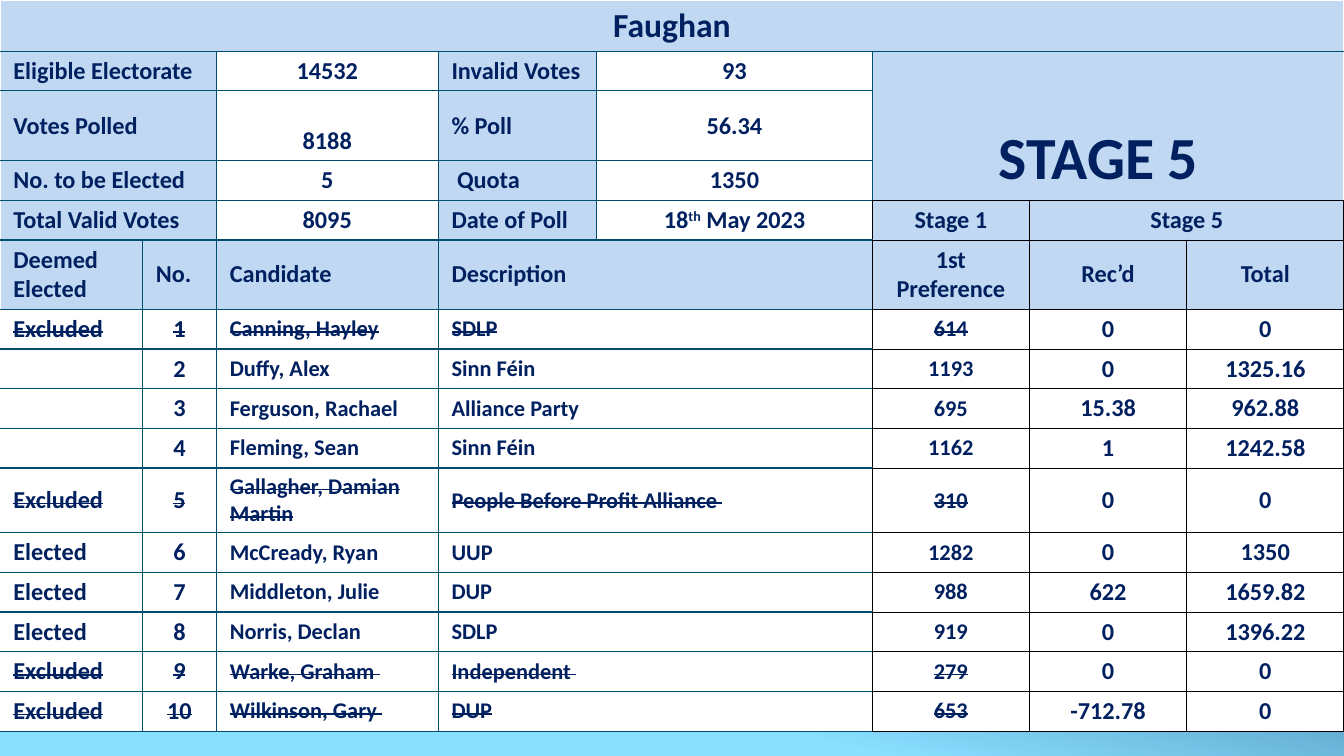
from dataclasses import dataclass
from lxml import etree
from pptx import Presentation
from pptx import util as u
from pptx.dml import color as col
from pptx.enum import text as tx
from pptx.oxml import ns


@dataclass
class Theme:
    font: str = "Calibri"
    ink: str = "002060"
    head: str = "C1D8F2"
    white: str = "FFFFFF"
    deep: str = "0D3868"
    sky: str = "8ADFFF"
    title: int = 18
    stage: int = 32
    body: int = 13
    small: int = 12
    pale: tuple = ("FFFFFF", 1)
    teal: tuple = ("004E6C", 0.75)
    black: tuple = ("000000", 0.5)


T = Theme()
MID = tx.MSO_ANCHOR.MIDDLE
LOW = tx.MSO_ANCHOR.BOTTOM
COLS = [1.06, 0.55, 1.65, 1.18, 2.05, 1.17, 1.17, 1.17]
TOP = [0.37, 0.29, 0.52, 0.29, 0.29, 0.51]

FACTS = [
    ("Eligible Electorate", "14532", "Invalid Votes", "93"),
    ("Votes Polled", "8188", "% Poll", "56.34"),
    ("No. to be Elected", "5", "\u00a0Quota", "1350"),
    ("Total Valid Votes", "8095", "Date of Poll",
     [("18", {}), ("th", {"baseline": "30000"}), (" May 2023", {})]),
]
HEADS = ["Deemed Elected", "No.", "Candidate", "Description",
         "1st Preference", "Rec’d", "Total"]
VOTES = [
    ("Excluded", "Canning, Hayley", "SDLP", "614", "0", "0"),
    ("", "Duffy, Alex", "Sinn Féin", "1193", "0", "1325.16"),
    ("", "Ferguson, Rachael", "Alliance Party", "695", "15.38", "962.88"),
    ("", "Fleming, Sean", "Sinn Féin", "1162", "1", "1242.58"),
    ("Excluded", "Gallagher, Damian Martin", "People Before Profit Alliance ",
     "310", "0", "0"),
    ("Elected", "McCready, Ryan", "UUP", "1282", "0", "1350"),
    ("Elected", "Middleton, Julie", "DUP", "988", "622", "1659.82"),
    ("Elected", "Norris, Declan", "SDLP", "919", "0", "1396.22"),
    ("Excluded", "Warke, Graham ", "Independent ", "279", "0", "0"),
    ("Excluded", "Wilkinson, Gary ", "DUP", "653", "-712.78", "0"),
]
SPOTS = [(0, 1), (1, 1), (2, 1), (3, 2), (5, 1), (6, 1), (7, 1)]


def rgb(code):
    return col.RGBColor.from_string(code)


def edge(cell, side, line):
    code, width = line
    ln = etree.SubElement(cell._tc.get_or_add_tcPr(), ns.qn("a:ln" + side),
                          w=str(u.Pt(width)))
    fill = etree.SubElement(ln, ns.qn("a:solidFill"))
    etree.SubElement(fill, ns.qn("a:srgbClr"), val=code)


def sides(row, left, wide):
    if left >= 5:
        return dict.fromkeys("LRTB", T.black)
    lines = dict.fromkeys("LRTB", T.teal)
    if left == 0:
        lines["L"] = T.pale
    if row >= 4 and left + wide == 5:
        lines["R"] = T.black
    return lines


def put(grid, row, left, words, wide=1, tall=1, fill=T.white, size=T.body,
        mid=False, anchor=MID, strike=False, lines=None):
    lines = lines or sides(row, left, wide)
    end, last = left + wide - 1, row + tall - 1
    for r in range(row, last + 1):
        for c in range(left, end + 1):
            first = (r, c) == (row, left)
            outer = {"L": c == left, "R": c == end,
                     "T": r == row, "B": r == last}
            for side in "LRTB":
                if first or outer[side]:
                    edge(grid.cell(r, c), side, lines[side])
    cell = grid.cell(row, left)
    if wide * tall > 1:
        cell.merge(grid.cell(last, end))
    cell.fill.solid()
    cell.fill.fore_color.rgb = rgb(fill)
    cell.vertical_anchor = anchor
    cell.margin_left = cell.margin_right = u.Inches(0.1)
    cell.margin_top = cell.margin_bottom = u.Pt(2.7)
    para = cell.text_frame.paragraphs[0]
    para.alignment = tx.PP_ALIGN.CENTER if mid else tx.PP_ALIGN.LEFT
    font = para.font
    font.name, font.size, font.bold = T.font, u.Pt(size), True
    font.color.rgb = rgb(T.ink)
    for part, marks in [(words, {})] if isinstance(words, str) else words:
        if part:
            run = para.add_run()
            run.text = part
            look = run._r.get_or_add_rPr()
            for key, val in marks.items():
                look.set(key, val)
            if strike:
                look.set("strike", "sngStrike")


def summary(grid, row):
    put(grid, row, 0, "Faughan", 8, fill=T.head, size=T.title, mid=True,
        lines={**dict.fromkeys("LRT", T.pale), "B": T.teal})
    for r, (name, count, label, value) in enumerate(FACTS, row + 1):
        put(grid, r, 0, name, 2, fill=T.head)
        put(grid, r, 2, count, mid=True,
            anchor=LOW if name == "Votes Polled" else MID)
        put(grid, r, 3, label, fill=T.head)
        put(grid, r, 4, value, mid=True)
    gap = ("\u00a0", {"sz": str(T.body * 100)})
    put(grid, row + 1, 5, [("STAGE 5\u00a0", {}), gap], 3, 3, T.head,
        T.stage, True, LOW,
        lines={"L": T.teal, "T": T.teal, "R": T.pale, "B": T.black})
    put(grid, row + 4, 5, "Stage 1", fill=T.head, mid=True)
    put(grid, row + 4, 6, "Stage 5", 2, fill=T.head, mid=True)


def results(grid, row):
    for (left, wide), name in zip(SPOTS, HEADS):
        put(grid, row, left, name, wide, fill=T.head, mid=left >= 5)
    for num, (state, *rest) in enumerate(VOTES, 1):
        for (left, wide), words in zip(SPOTS, (state, str(num), *rest)):
            put(grid, row + num, left, words, wide,
                size=T.small if left in (2, 3, 5) else T.body,
                mid=left == 1 or left >= 5,
                strike=state == "Excluded" and left <= 5)


def board(slide, left, top, width):
    rows = TOP + [0.48 if len(vote[1]) > 20 else 0.29 for vote in VOTES]
    box = [u.Inches(n) for n in (left, top, width, sum(rows))]
    grid = slide.shapes.add_table(len(rows), len(COLS), *box).table
    grid.first_row = grid.horz_banding = False
    for item, size in zip(grid.columns, COLS):
        item.width = u.Inches(size * width / sum(COLS))
    for item, size in zip(grid.rows, rows):
        item.height = u.Inches(size)
    summary(grid, 0)
    results(grid, len(TOP) - 1)


def backdrop(slide):
    fill = slide.background.fill
    fill.gradient()
    fill.gradient_angle = 258
    for stop, (spot, code) in zip(fill.gradient_stops,
                                  [(0.42, T.deep), (0.82, T.sky)]):
        stop.position = spot
        stop.color.rgb = rgb(code)


def main():
    deck = Presentation()
    deck.slide_width, deck.slide_height = u.Pt(720), u.Pt(405)
    slide = deck.slides.add_slide(deck.slide_layouts[6])
    backdrop(slide)
    board(slide, 0, 0, 10)
    deck.save("out.pptx")


if __name__ == "__main__":
    main()
